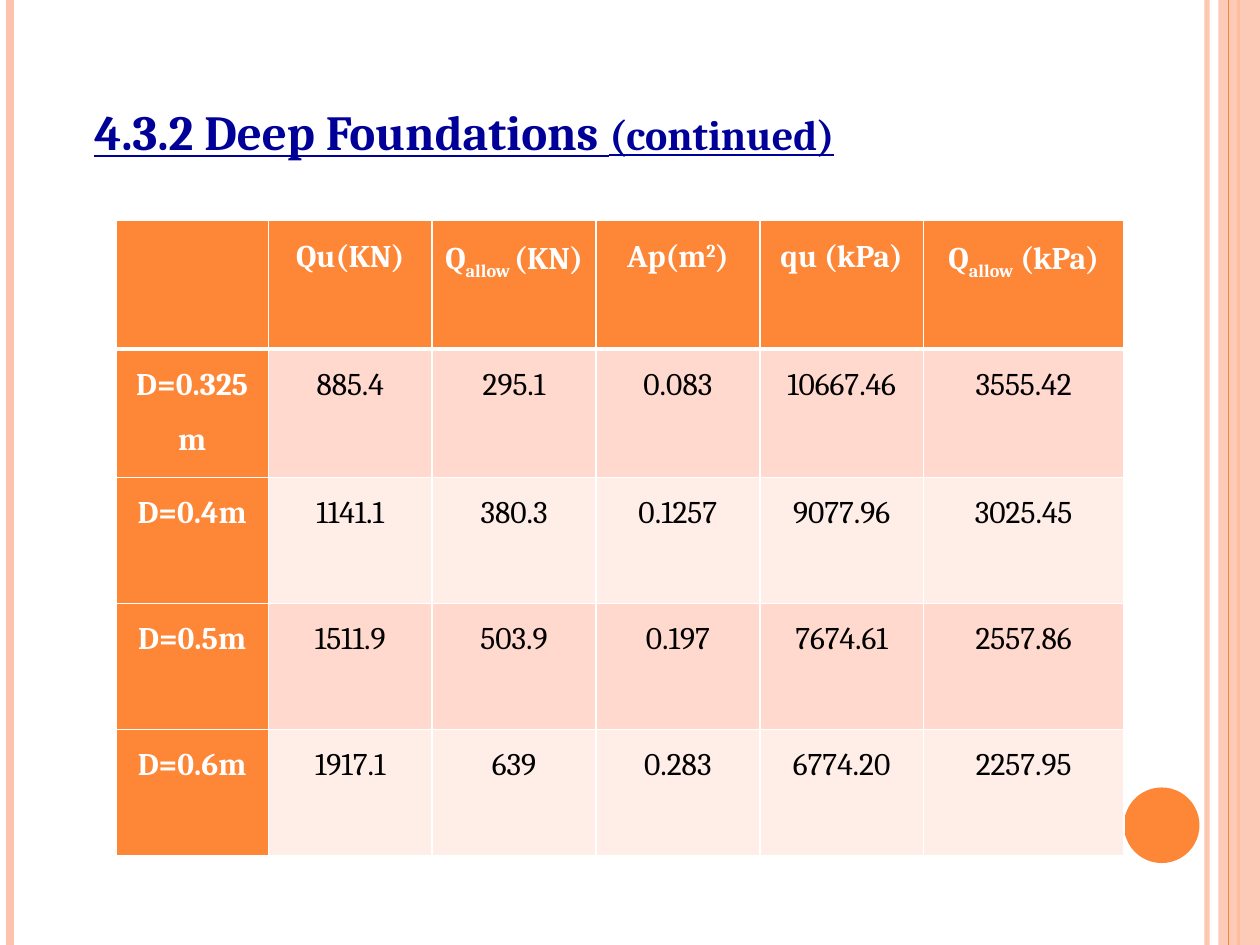
from dataclasses import dataclass

from lxml import etree
from pptx import Presentation
from pptx.dml.color import RGBColor
from pptx.enum.shapes import MSO_CONNECTOR, MSO_SHAPE
from pptx.enum.text import MSO_AUTO_SIZE, PP_ALIGN
from pptx.oxml.ns import qn
from pptx.util import Inches, Pt

STRAIGHT = MSO_CONNECTOR.STRAIGHT
RECT = MSO_SHAPE.RECTANGLE
OVAL = MSO_SHAPE.OVAL
CENTER = PP_ALIGN.CENTER
GROW = MSO_AUTO_SIZE.SHAPE_TO_FIT_TEXT


@dataclass(frozen=True)
class Theme:
    font: str = "Cambria"
    orange: str = "FE8637"
    peach: str = "FEC3AE"
    bands: tuple = ("FFD9CE", "FFEDE8")
    white: str = "FFFFFF"
    black: str = "000000"
    navy: str = "000099"
    title: int = 28
    note: int = 24
    body: int = 18


@dataclass(frozen=True)
class Stripe:
    x: float
    color: str
    width: float
    alpha: int = 100


@dataclass(frozen=True)
class Part:
    text: str
    base: int = 0


THEME = Theme()
HIGH = 7.5
BACK = [
    Stripe(9.58, THEME.peach, 3, 93),
    Stripe(0.08, THEME.peach, 4.5),
    Stripe(9.83, THEME.orange, 1.5),
]
FRONT = Stripe(9.75, THEME.orange, 0.75)

COLS = [1.21, 1.3, 1.3, 1.3, 1.3, 1.59]
ROWS = [1.02, 1.02, 1, 1, 1]
HEAD = [
    [],
    [Part("Qu(KN)")],
    [Part("Q"), Part("allow ", -25), Part("(KN)")],
    [Part("Ap(m"), Part("2", 30), Part(")")],
    [Part("qu (kPa)")],
    [Part("Q"), Part("allow", -25), Part(" (kPa)")],
]
DATA = [
    ["D=0.325m", "885.4", "295.1", "0.083", "10667.46", "3555.42"],
    ["D=0.4m", "1141.1", "380.3", "0.1257", "9077.96", "3025.45"],
    ["D=0.5m", "1511.9", "503.9", "0.197", "7674.61", "2557.86"],
    ["D=0.6m", "1917.1", "639", "0.283", "6774.20", "2257.95"],
]


def rgb(code: str) -> RGBColor:
    return RGBColor.from_string(code)


def fade(fill, alpha: int) -> None:
    """Set the opacity, in percent, of the solid colour inside an element."""
    color = next(fill.iter(qn("a:srgbClr")))
    etree.SubElement(color, qn("a:alpha"), val=str(alpha * 1000))


def draw_stripe(slide, stripe: Stripe) -> None:
    x = Inches(stripe.x)
    line = slide.shapes.add_connector(STRAIGHT, x, 0, x, Inches(HIGH))
    line.line.color.rgb = rgb(stripe.color)
    line.line.width = Pt(stripe.width)
    props = line._element.spPr
    if stripe.alpha < 100:
        fade(props, stripe.alpha)
    etree.SubElement(props, qn("a:effectLst"))


def draw_shape(slide, kind, box: tuple, color: str, alpha: int = 100) -> None:
    shape = slide.shapes.add_shape(kind, *map(Inches, box))
    shape.shadow.inherit = False
    shape.fill.solid()
    shape.fill.fore_color.rgb = rgb(color)
    shape.line.fill.background()
    if alpha < 100:
        fade(shape._element.spPr, alpha)


def set_font(font, size: int, color: str, bold: bool) -> None:
    font.name = THEME.font
    font.size = Pt(size)
    font.bold = bold
    font.color.rgb = rgb(color)


def add_edge(cell, side: str, width: float) -> None:
    props = cell._tc.get_or_add_tcPr()
    edge = etree.SubElement(props, qn(f"a:ln{side}"), w=str(Pt(width)))
    fill = etree.SubElement(edge, qn("a:solidFill"))
    etree.SubElement(fill, qn("a:srgbClr"), val=THEME.white)


def fill_cell(cell, parts: list[Part], row: int, col: int) -> None:
    label = row == 0 or col == 0
    thick = {(0, "B"), (1, "T")}
    for side in "LRTB":
        add_edge(cell, side, 3 if (row, side) in thick else 1)
    cell.fill.solid()
    shade = THEME.orange if label else THEME.bands[(row - 1) % 2]
    cell.fill.fore_color.rgb = rgb(shade)
    cell.margin_left = cell.margin_right = Inches(0.07)
    cell.margin_top = cell.margin_bottom = 0

    para = cell.text_frame.paragraphs[0]
    para.alignment = CENTER
    para.line_spacing = 1.5
    set_font(para.font, THEME.body, THEME.white if label else THEME.black, label)
    for part in parts:
        run = para.add_run()
        run.text = part.text
        if part.base:
            run._r.get_or_add_rPr().set("baseline", str(part.base * 1000))


def draw_table(slide) -> None:
    grid = [HEAD] + [[[Part(text)] for text in line] for line in DATA]
    box = (0.92, 1.75, sum(COLS), sum(ROWS))
    frame = slide.shapes.add_table(len(ROWS), len(COLS), *map(Inches, box))
    table = frame.table
    for col, width in zip(table.columns, COLS):
        col.width = Inches(width)
    for row, height in zip(table.rows, ROWS):
        row.height = Inches(height)
    for i, line in enumerate(grid):
        for j, parts in enumerate(line):
            fill_cell(table.cell(i, j), parts, i, j)


def draw_title(slide) -> None:
    box = slide.shapes.add_textbox(*map(Inches, (0.65, 0.76, 8.27, 0.57)))
    frame = box.text_frame
    frame.word_wrap = True
    frame.auto_size = GROW
    para = frame.paragraphs[0]
    set_font(para.font, THEME.title, THEME.navy, True)
    para.font.underline = True
    para.add_run().text = "4.3.2 Deep Foundations "
    note = para.add_run()
    note.text = "(continued)"
    note.font.size = Pt(THEME.note)


def main() -> None:
    deck = Presentation()
    deck.slide_width, deck.slide_height = Inches(10), Inches(HIGH)
    slide = deck.slides.add_slide(deck.slide_layouts[6])
    for stripe in BACK:
        draw_stripe(slide, stripe)
    draw_shape(slide, RECT, (9.67, 0, 0.33, HIGH), THEME.peach, 87)
    draw_stripe(slide, FRONT)
    draw_shape(slide, OVAL, (8.92, 6.25, 0.6, 0.6), THEME.orange)
    draw_table(slide)
    draw_title(slide)
    deck.save("out.pptx")


if __name__ == "__main__":
    main()
